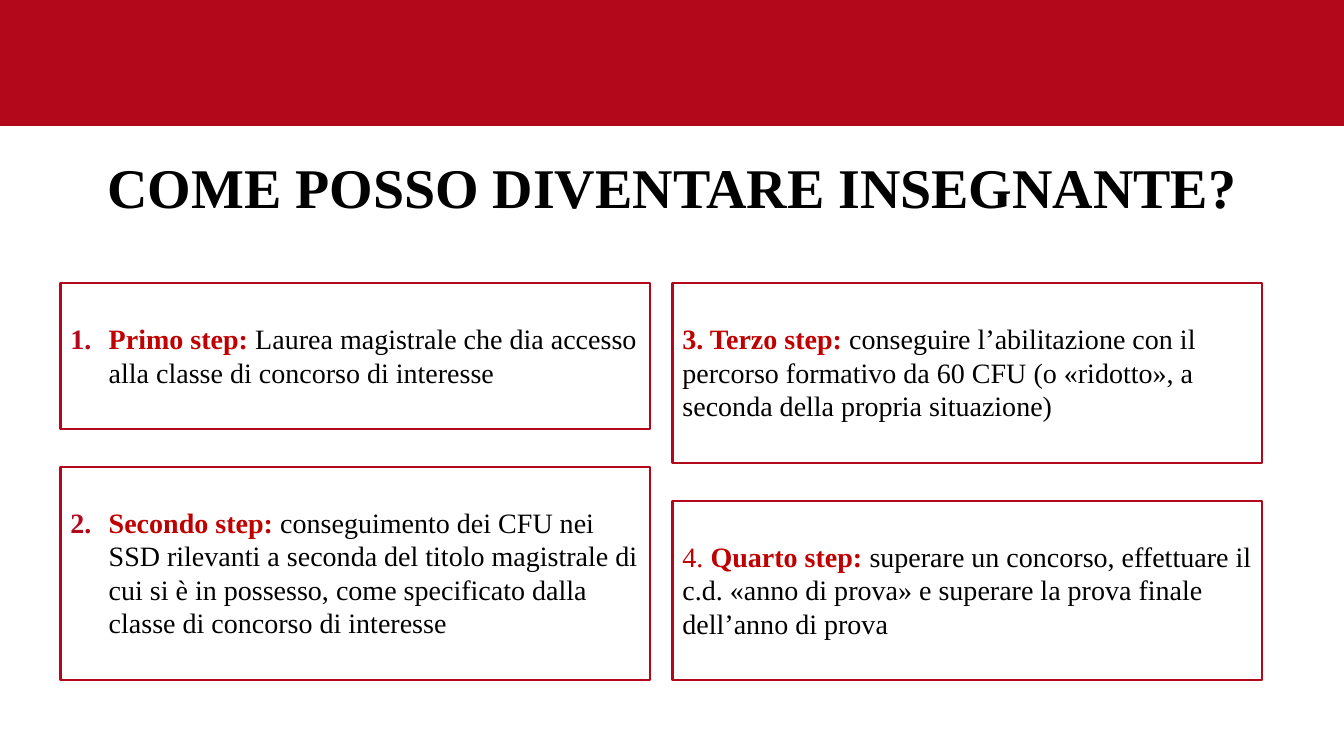
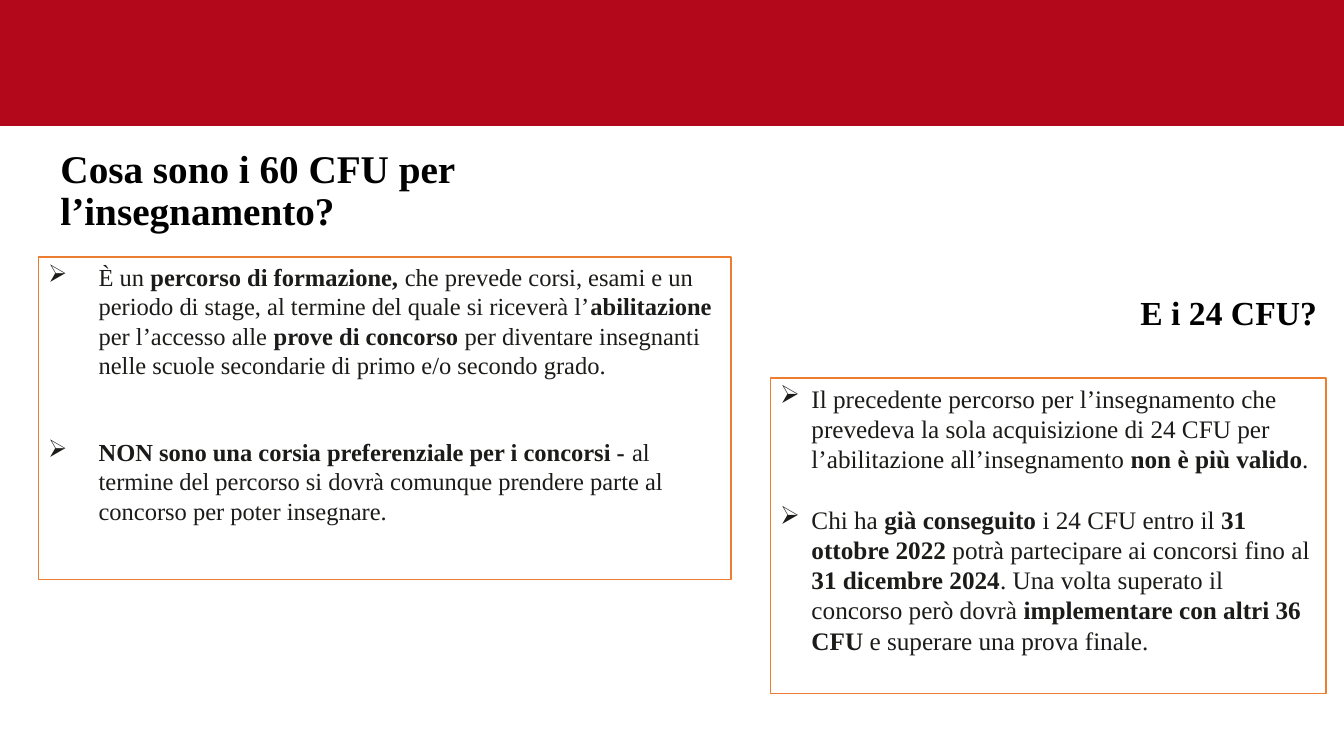
from lxml import etree
from pptx import Presentation
from pptx import util as u
from pptx.dml.color import RGBColor
from pptx.enum import shapes, text
from pptx.oxml import ns

BLACK = RGBColor(0x00, 0x00, 0x00)
INK = RGBColor(0x1B, 0x1B, 0x19)
WHITE = RGBColor(0xFF, 0xFF, 0xFF)
CRIMSON = RGBColor(0xB3, 0x07, 0x1B)
RED = RGBColor(0xC0, 0x00, 0x00)
ORANGE = RGBColor(0xED, 0x7D, 0x31)
FONT = "Times New Roman"
LEFT, CENTER, RIGHT = text.PP_ALIGN.LEFT, text.PP_ALIGN.CENTER, text.PP_ALIGN.RIGHT
TITLE_STYLE = dict(bold=True, anchor=text.MSO_ANCHOR.MIDDLE, line_spacing=0.9)


def write(shape, *paragraphs, size, color=BLACK, bold=False, bold_color=None, lead="",
          align=LEFT, anchor=text.MSO_ANCHOR.TOP, line_spacing=None, gap=0,
          top_inset=0.05, indent=0, bullet=None, number=None):
    """Write paragraphs; text between ** marks is bold, in bold_color if given."""
    frame = shape.text_frame
    frame.word_wrap = True
    frame.auto_size = text.MSO_AUTO_SIZE.NONE
    frame.vertical_anchor = anchor
    frame.margin_top = u.Inches(top_inset)
    for index, content in enumerate(paragraphs):
        paragraph = frame.paragraphs[0] if index == 0 else frame.add_paragraph()
        properties = paragraph._p.get_or_add_pPr()
        if indent:
            properties.set("marL", str(u.Inches(indent)))
            properties.set("indent", str(-u.Inches(indent)))
        if number:
            bullet_color = etree.SubElement(properties, ns.qn("a:buClr"))
            etree.SubElement(bullet_color, ns.qn("a:srgbClr"), val=str(CRIMSON))
            etree.SubElement(properties, ns.qn("a:buAutoNum"), type="arabicPeriod",
                             startAt=str(number))
        elif bullet:
            etree.SubElement(properties, ns.qn("a:buChar"), char=bullet)
        paragraph.alignment = align
        paragraph.line_spacing = line_spacing
        paragraph.space_before = u.Pt(gap if index else 0)
        pieces = [(piece, bool(position % 2), bold_color if position % 2 else None)
                  for position, piece in enumerate(content.split("**"))]
        for piece, strong, piece_color in [(lead, False, bold_color)] + pieces:
            if piece:
                run = paragraph.add_run()
                run.text = piece
                run.font.name = FONT
                run.font.size = u.Pt(size)
                run.font.bold = bold or strong
                run.font.color.rgb = piece_color or color


def add_rectangle(slide, left, top, width, height, fill=None, line=None, line_width=1):
    shape = slide.shapes.add_shape(shapes.MSO_SHAPE.RECTANGLE, u.Inches(left),
                                   u.Inches(top), u.Inches(width), u.Inches(height))
    shape.shadow.inherit = False
    if fill is None:
        shape.fill.background()
    else:
        shape.fill.solid()
        shape.fill.fore_color.rgb = fill
    if line is None:
        shape.line.fill.background()
    else:
        shape.line.color.rgb = line
        shape.line.width = u.Pt(line_width)
    return shape


presentation = Presentation()
presentation.slide_width = u.Inches(13.33)
presentation.slide_height = u.Inches(7.5)
layout = presentation.slide_layouts[5]

# Slides and their titles
slides = []
for title, left, top, width, height, size, align in [
    ("COME POSSO DIVENTARE INSEGNANTE?", 0.25, 1.25, 12.83, 1.28, 40, CENTER),
    ("Cosa sono i 60 CFU per l’insegnamento?", 0.5, 1.26, 6.8, 1.29, 28, LEFT),
]:
    slide = presentation.slides.add_slide(layout)
    placeholder = slide.shapes.title
    placeholder.left, placeholder.top = u.Inches(left), u.Inches(top)
    placeholder.width, placeholder.height = u.Inches(width), u.Inches(height)
    write(placeholder, title, size=size, align=align, **TITLE_STYLE)
    slides.append(slide)
steps_slide, credits_slide = slides

# Red band, shared through the slide master
band = add_rectangle(steps_slide, 0, 0, 13.33, 1.25, fill=CRIMSON)
band._element.nvSpPr.cNvPr.set("id", "100")
presentation.slide_master.shapes._spTree.insert(2, band._element)

# Slide 1: four steps in two columns
LEFT_COLUMN, RIGHT_COLUMN, STEP_WIDTH = 0.6, 6.67, 5.85
for left, top, height, content, options in [
    (LEFT_COLUMN, 2.81, 1.45,
     "**Primo step: **Laurea magistrale che dia accesso alla classe di concorso di interesse",
     dict(indent=0.38, number=1)),
    (LEFT_COLUMN, 4.63, 2.12,
     "**Secondo step: **conseguimento dei CFU nei SSD rilevanti a seconda del titolo "
     "magistrale di cui si è in possesso, come specificato dalla classe di concorso "
     "di interesse",
     dict(indent=0.38, number=2)),
    (RIGHT_COLUMN, 2.81, 1.78,
     "**3. Terzo step: **conseguire l’abilitazione con il percorso formativo da 60 CFU "
     "(o «ridotto», a seconda della propria situazione)", {}),
    (RIGHT_COLUMN, 4.97, 1.78,
     "**Quarto step: **superare un concorso, effettuare il c.d. «anno di prova» e "
     "superare la prova finale dell’anno di prova", dict(lead="4. ")),
]:
    step = add_rectangle(steps_slide, left, top, STEP_WIDTH, height,
                         line=CRIMSON, line_width=1.5)
    write(step, content, size=20, bold_color=RED, top_inset=0.38, **options)

# Slide 2: the 60 CFU path
path_box = add_rectangle(credits_slide, 0.38, 2.55, 6.87, 3.2, fill=WHITE, line=ORANGE)
write(path_box,
      "È un **percorso di formazione,** che prevede corsi, esami e un periodo di stage, "
      "al termine del quale si riceverà l’**abilitazione** per l’accesso alle "
      "**prove di concorso** per diventare insegnanti nelle scuole secondarie di primo "
      "e/o secondo grado.",
      "**NON sono una corsia preferenziale per i concorsi - **al termine del percorso "
      "si dovrà comunque prendere parte al concorso per poter insegnare.",
      size=17.5, color=INK, gap=41, indent=0.5, bullet="➢")

# Slide 2: the former 24 CFU path
subtitle = credits_slide.shapes.add_textbox(u.Inches(4.9), u.Inches(2.47),
                                            u.Inches(8.26), u.Inches(1.3))
write(subtitle, "E i 24 CFU?", size=24, align=RIGHT, **TITLE_STYLE)
former_box = add_rectangle(credits_slide, 7.64, 3.75, 5.51, 3.13, fill=WHITE, line=ORANGE)
write(former_box,
      "Il precedente percorso per l’insegnamento che prevedeva la sola acquisizione di "
      "24 CFU per l’abilitazione all’insegnamento **non è più valido**.",
      "Chi ha **già conseguito **i 24 CFU entro il **31 ottobre 2022 **potrà partecipare "
      "ai concorsi fino al **31 dicembre 2024**. Una volta superato il concorso però "
      "dovrà **implementare con altri 36 CFU **e superare una prova finale.",
      size=18, color=INK, gap=21.6, indent=0.31, bullet="➢")

presentation.save("out.pptx")
